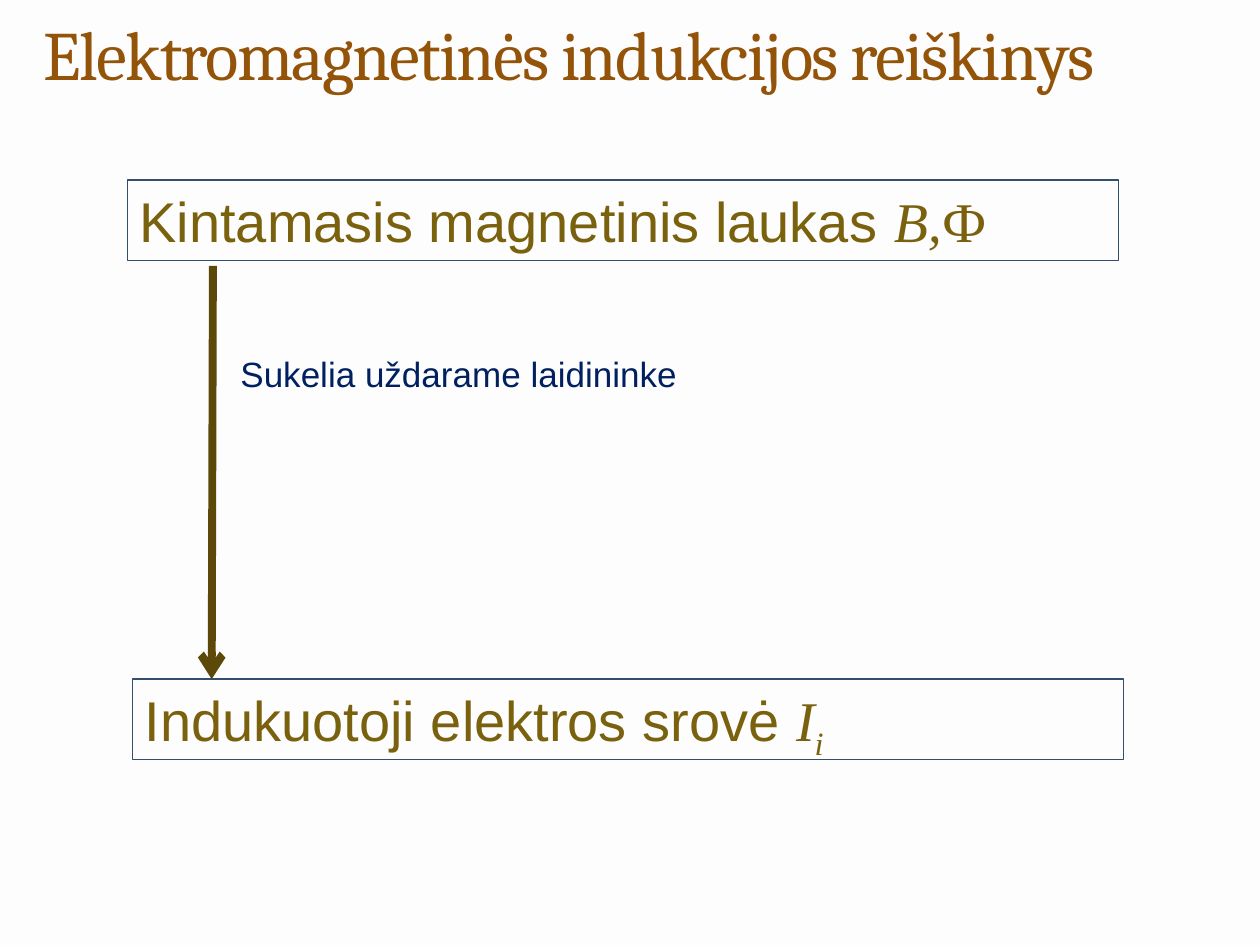
"""Slide: how a changing magnetic field induces an electric current."""
from lxml import etree
from pptx import Presentation
from pptx import util as u
from pptx.dml.color import RGBColor
from pptx.enum import shapes, text
from pptx.oxml.ns import qn

PAPER = RGBColor(0xFD, 0xFD, 0xFD)
BROWN = RGBColor(0x93, 0x54, 0x0A)
OLIVE = RGBColor(0x7A, 0x61, 0x0D)
DARK = RGBColor(0x5C, 0x49, 0x0A)
NAVY = RGBColor(0x00, 0x20, 0x60)
EDGE = RGBColor(0x34, 0x4E, 0x6D)

WIDE, HIGH = 10, 7.5
SANS, SERIF = "Arial", "Times New Roman"
TITLE = [("Elektromagnetinės indukcijos reiškinys", "Cambria", {"spc": "-100"})]
NOTE = [("Sukelia uždarame laidininke", SANS, {})]
BOXES = [
    (1.01, 1.43, [("Kintamasis magnetinis laukas ", SANS, {}),
                  ("B,", SERIF, {"i": "1"}),
                  ("Ф", SERIF, {})]),
    (1.05, 5.39, [("Indukuotoji elektros srovė ", SANS, {}),
                  ("I", SERIF, {"i": "1"}),
                  ("i", SERIF, {"i": "1", "baseline": "-25000"})]),
]
BOX_W, BOX_H = 7.87, 0.64


def write(shape, runs, size, color, anchor=text.MSO_ANCHOR.TOP):
    frame = shape.text_frame
    frame.word_wrap = True
    frame.vertical_anchor = anchor
    para = frame.paragraphs[0]
    para.alignment = text.PP_ALIGN.LEFT
    for words, face, extra in runs:
        run = para.add_run()
        run.text = words
        run.font.name, run.font.size = face, u.Pt(size)
        run.font.color.rgb = color
        props = run.font._element if hasattr(run.font, "_element") else run._r.get_or_add_rPr()
        for key, val in extra.items():
            props.set(key, val)
    return frame


def label(slide, at, *style):
    return write(slide.shapes.add_textbox(*map(u.Inches, at)), *style)


def box(slide, left, top, runs):
    rect = slide.shapes.add_shape(
        shapes.MSO_SHAPE.RECTANGLE, *map(u.Inches, (left, top, BOX_W, BOX_H)))
    rect.shadow.inherit = False
    rect.fill.background()
    rect.line.color.rgb, rect.line.width = EDGE, u.Pt(0.75)
    write(rect, runs, 32, OLIVE)


def arrow(slide, *ends):
    line = slide.shapes.add_connector(
        shapes.MSO_CONNECTOR.STRAIGHT, *map(u.Inches, ends))
    line.line.color.rgb, line.line.width = DARK, u.Pt(4.5)
    etree.SubElement(line.line._get_or_add_ln(), qn("a:tailEnd"), type="arrow")
    etree.SubElement(line._element.spPr, qn("a:effectLst"))


def main():
    deck = Presentation()
    deck.slide_width, deck.slide_height = u.Inches(WIDE), u.Inches(HIGH)
    slide = deck.slides.add_slide(deck.slide_layouts[6])
    slide.background.fill.solid()
    slide.background.fill.fore_color.rgb = PAPER
    for item in BOXES:
        box(slide, *item)
    label(slide, (1.81, 2.75, 4.43, 0.44), NOTE, 20, NAVY)
    arrow(slide, 1.69, 2.11, 1.68, BOXES[1][1])
    head = label(slide, (0.25, 0.36, WIDE - 0.5, 1.08), TITLE, 39.6, BROWN,
                 text.MSO_ANCHOR.BOTTOM)
    head.margin_bottom = u.Inches(0.69)
    deck.save("out.pptx")


if __name__ == "__main__":
    main()
